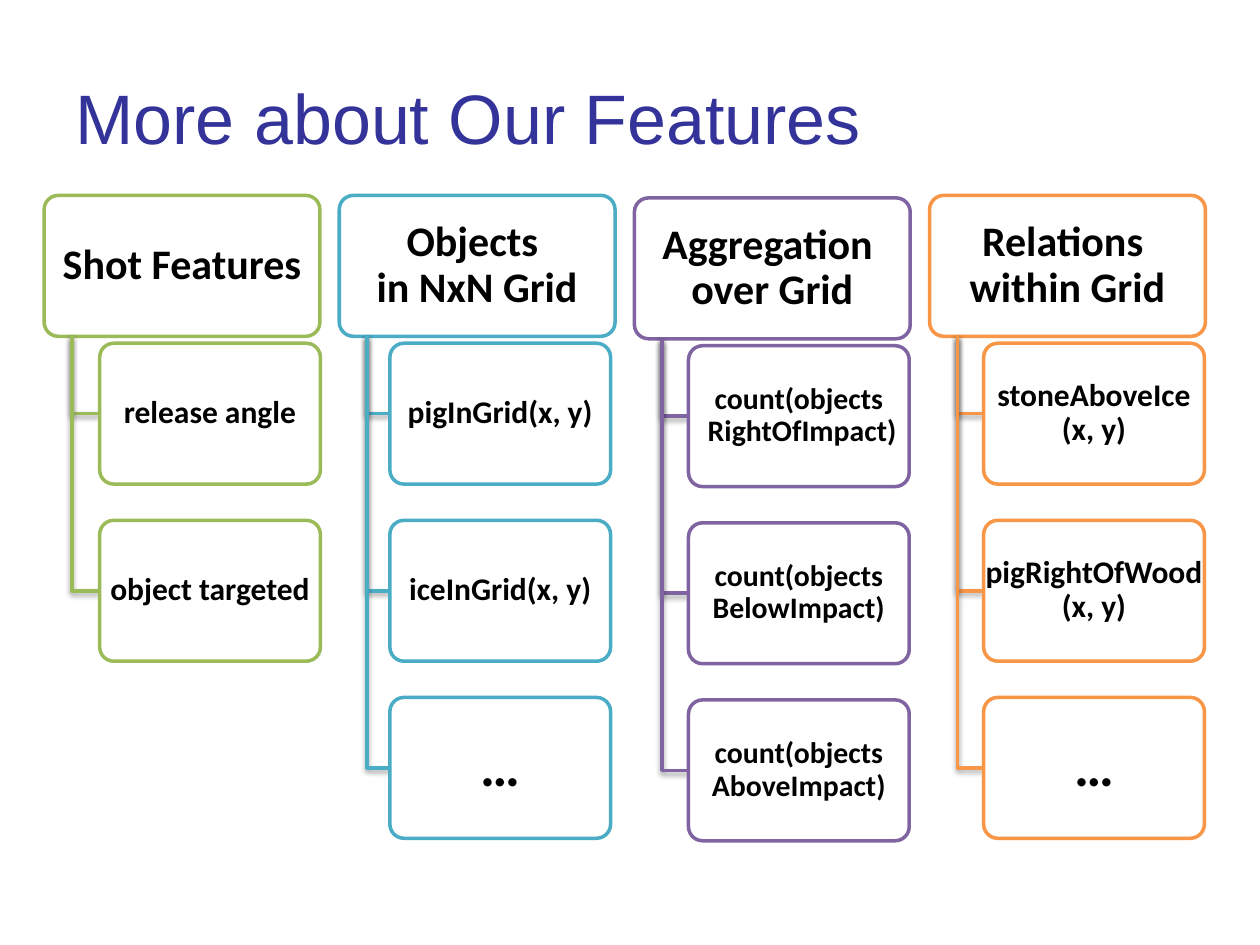
from lxml import etree
from pptx import Presentation
from pptx import util as u
from pptx.dml.color import RGBColor
from pptx.enum import shapes, text
from pptx.oxml import ns

Cm = u.Cm
rgb = RGBColor.from_string

pres = Presentation()
pres.slide_width, pres.slide_height = Cm(25.4), Cm(19.05)
slide = pres.slides.add_slide(pres.slide_layouts[5])

# Title
title = slide.shapes.title
title.left, title.top, title.width, title.height = Cm(1.27), Cm(0.76), Cm(18.44), Cm(3.18)
frame = title.text_frame
frame.text = "More about Our Features"
frame.auto_size = text.MSO_AUTO_SIZE.NONE
frame.vertical_anchor = text.MSO_ANCHOR.MIDDLE
para = frame.paragraphs[0]
para.alignment = text.PP_ALIGN.LEFT
para.font.name, para.font.size = "Arial", u.Pt(40)
para.font.color.rgb = rgb("333399")


def add_box(x, y, wide, words, size, hue):
    box = slide.shapes.add_shape(shapes.MSO_SHAPE.ROUNDED_RECTANGLE,
                                 Cm(x), Cm(y), Cm(wide), Cm(HIGH))
    box.adjustments[0] = 0.1
    box.shadow.inherit = False
    box.fill.solid()
    box.fill.fore_color.rgb = rgb("FFFFFF")
    box.line.color.rgb, box.line.width = rgb(hue), u.Pt(2)
    frame = box.text_frame
    frame.word_wrap = False
    frame.margin_left = frame.margin_right = Cm(0.1)
    frame.margin_top = frame.margin_bottom = Cm(0.1)
    frame.vertical_anchor = text.MSO_ANCHOR.MIDDLE
    frame.text = words.replace("\n", "\v")
    para = frame.paragraphs[0]
    para.alignment, para.line_spacing = text.PP_ALIGN.CENTER, 0.9
    para.font.name, para.font.size, para.font.bold = "Calibri", u.Pt(size), True
    para.font.color.rgb = rgb("000000")


def add_elbow(x, top, end, mid, hue):
    path = slide.shapes.build_freeform(Cm(x), Cm(top))
    path.add_line_segments([(Cm(x), Cm(mid)), (Cm(end), Cm(mid))], close=False)
    line = path.convert_to_shape()
    line.fill.background()
    line.line.color.rgb, line.line.width = rgb(hue), u.Pt(2)
    line.shadow.inherit = False
    glow = etree.SubElement(line.element.spPr.find(ns.qn("a:effectLst")),
                            ns.qn("a:outerShdw"), blurRad="40000", dist="20000",
                            dir="5400000", rotWithShape="0")
    tint = etree.SubElement(glow, ns.qn("a:srgbClr"), val="000000")
    etree.SubElement(tint, ns.qn("a:alpha"), val="38000")


# Columns: heading, colour, top, indent of the items, item size, items
HIGH = 2.84
cols = [
    ("Shot Features", "9BBB59", 3.94, 1.12, 18,
     ["release angle", "object targeted"]),
    ("Objects \nin NxN Grid", "4BACC6", 3.94, 1.02, 18,
     ["pigInGrid(x, y)", "iceInGrid(x, y)", "…"]),
    ("Aggregation \nover Grid", "8064A2", 3.99, 1.09, 17,
     ["count(objects\n RightOfImpact)", "count(objects\nBelowImpact)",
      "count(objects\nAboveImpact)"]),
    ("Relations \nwithin Grid", "F79646", 3.94, 1.09, 18,
     ["stoneAboveIce\n(x, y)", "pigRightOfWood\n(x, y)", "…"]),
]
for col, (head, hue, top, indent, size, items) in enumerate(cols):
    left = 0.89 + 5.95 * col
    add_box(left, top, 5.56, head, 24, hue)
    for row, item in enumerate(items):
        y = top + 2.98 + 3.57 * row
        add_elbow(left + 0.56, top + HIGH, left + indent, y + HIGH / 2, hue)
        add_box(left + indent, y, 4.45, item, 32 if item == "…" else size, hue)

pres.save("out.pptx")
